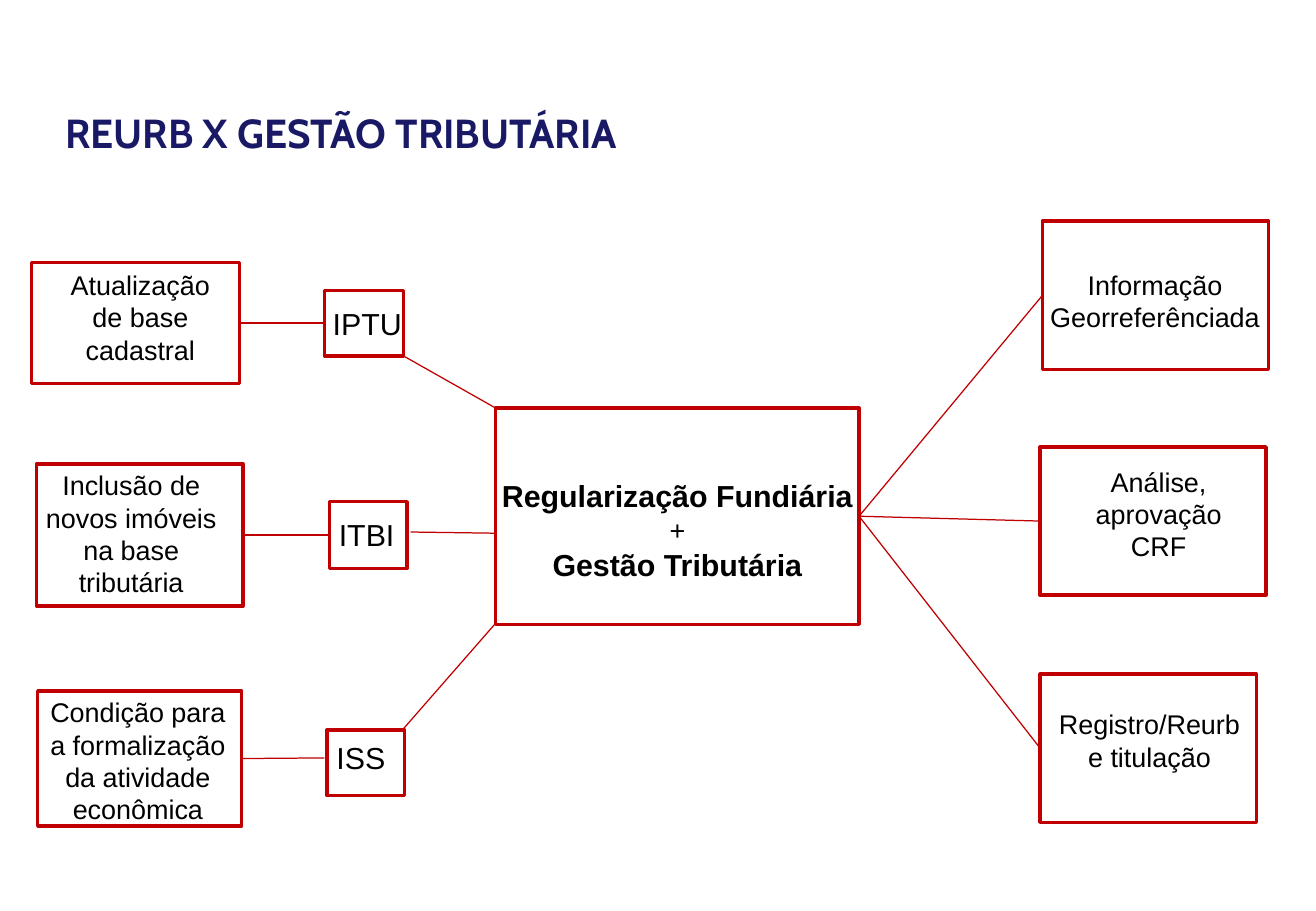
from lxml import etree
from pptx import Presentation, util as u
from pptx.dml.color import RGBColor
from pptx.enum import shapes, text
from pptx.oxml.ns import qn

NAVY = RGBColor(0x19, 0x19, 0x66)
RED = RGBColor(0xC0, 0x00, 0x00)
BLACK = RGBColor(0x00, 0x00, 0x00)
LEFT, RIGHT = 1, 3


class Diagram:
    """Draws on one slide, with lengths in grid columns and rows of a tenth of an inch."""

    cell = u.Inches(0.1)
    font = "Arial"

    def __init__(self, slide):
        self.slide = slide

    def grid(self, *lengths):
        return [round(length * self.cell) for length in lengths]

    def box(self, *area):
        frame = self.slide.shapes.add_shape(shapes.MSO_SHAPE.RECTANGLE, *self.grid(*area))
        frame.shadow.inherit = False
        frame.fill.background()
        frame.line.color.rgb = RED
        frame.line.width = u.Pt(2)
        return frame

    def label(self, area, lines, size=16, centred=True, wrap=True, color=BLACK, font=font):
        frame = self.slide.shapes.add_textbox(*self.grid(*area)).text_frame
        frame.word_wrap = wrap
        frame.text = lines
        for line in frame.paragraphs:
            line.alignment = text.PP_ALIGN.CENTER if centred else text.PP_ALIGN.LEFT
            for run in line.runs:
                run.font.name = font
                run.font.size = u.Pt(size)
                run.font.color.rgb = color
        return frame

    def link(self, start, end):
        """Join two ends, each a (box, side) pair or a (column, row) point."""
        points = [(0, 0) if hasattr(place[0], "line") else self.grid(*place)
                  for place in (start, end)]
        line = self.slide.shapes.add_connector(
            shapes.MSO_CONNECTOR.STRAIGHT, *points[0], *points[1])
        for place, connect in ((start, line.begin_connect), (end, line.end_connect)):
            if hasattr(place[0], "line"):
                connect(*place)
        line.line.color.rgb = RED
        line.line.width = u.Pt(0.75)
        etree.SubElement(line._element.spPr, qn("a:effectLst"))


def main():
    deck = Presentation()
    deck.slide_width, deck.slide_height = u.Inches(10.83), u.Inches(7.5)
    diagram = Diagram(deck.slides.add_slide(deck.slide_layouts[6]))

    title = diagram.label((4.4, 8.4, 54.3, 5), "REURB X GESTÃO TRIBUTÁRIA", 24,
                          centred=False, wrap=False, color=NAVY, font="Cabin")
    title.paragraphs[0].runs[0].font.bold = True

    core = diagram.box(40.8, 33.6, 29.9, 17.8)
    theme = diagram.label((39.4, 38.8, 32.7, 9.9),
                          "Regularização Fundiária\n+\nGestão Tributária", 18)
    theme.paragraphs[1].runs[0].font.size = u.Pt(16)
    for name in theme.paragraphs[::2]:
        name.runs[0].font.bold = True

    effects = [
        ((2.6, 21.6, 17.1, 10), (4.4, 21.6, 14.3, 9.1), "Atualização de base cadastral"),
        ((3, 38.2, 17, 11.7), (2.5, 38.1, 16.6, 11.8),
         "Inclusão de novos imóveis na base tributária"),
        ((3.1, 56.9, 16.8, 11.1), (3, 56.8, 16.7, 11.8),
         "Condição para a formalização da atividade econômica"),
    ]
    taxes = [
        ((26.7, 23.9, 6.5, 5.4), (26.4, 24.6, 10.6, 4), "IPTU"),
        ((27.1, 41.3, 6.4, 5.5), (26.9, 42, 6.6, 4), "ITBI"),
        ((26.9, 60.1, 6.4, 5.4), (26.7, 60.4, 6.5, 4), "ISS"),
    ]
    for (effect_area, effect_text, effect), (tax_area, tax_text, tax) in zip(effects, taxes):
        effect_box, tax_box = diagram.box(*effect_area), diagram.box(*tax_area)
        diagram.label(effect_text, effect)
        diagram.label(tax_text, tax, 18, centred=False)
        tax_end = (26.7, 62.4) if tax == "ISS" else (tax_box, LEFT)
        diagram.link((effect_box, RIGHT), tax_end)

    for tax_end, core_end in [((33.2, 29.3), (40.8, 33.6)),
                              ((33.8, 43.8), (40.8, 43.9)),
                              ((33.2, 60), (40.8, 51.3))]:
        diagram.link(tax_end, core_end)

    steps = [
        ((85.8, 18.2, 18.6, 12.2), (85.3, 21.6, 19.5, 6.4), "Informação\nGeorreferênciada"),
        ((85.6, 36.8, 18.6, 12.2), (85.8, 37.8, 19.1, 9.1), "Análise, aprovação\nCRF"),
        ((85.6, 55.5, 17.8, 12.2), (85.8, 57.8, 17.6, 6.4), "Registro/Reurb e titulação"),
    ]
    for step_area, step_text, step in steps:
        step_box = diagram.box(*step_area)
        diagram.label(step_text, step)
        diagram.link((core, RIGHT), (step_box, LEFT))

    deck.save("out.pptx")


if __name__ == "__main__":
    main()
